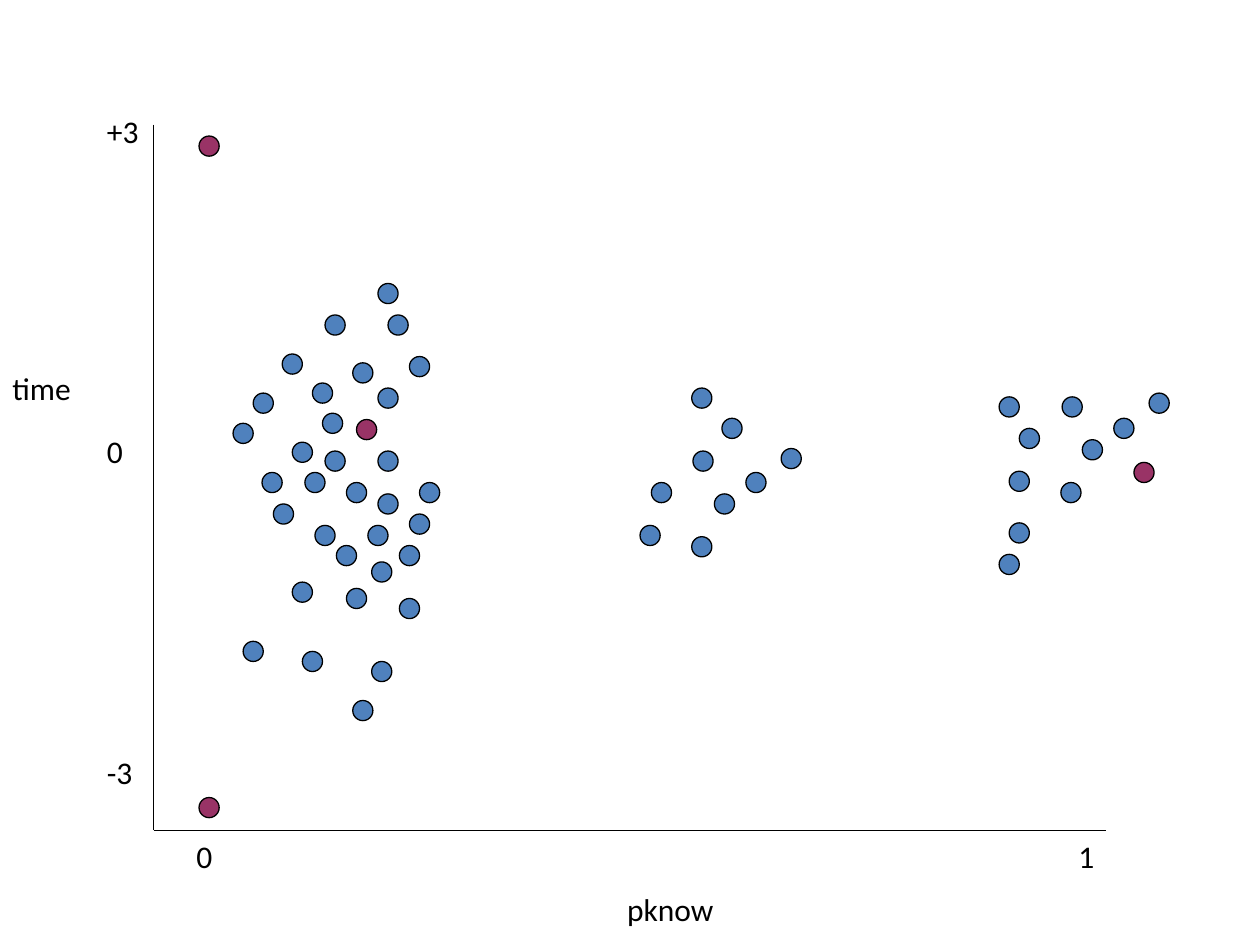
from dataclasses import dataclass

from lxml import etree
from pptx import Presentation
from pptx.dml.color import RGBColor
from pptx.enum.shapes import MSO_CONNECTOR as Connector, MSO_SHAPE as Shape
from pptx.enum.text import PP_ALIGN as Align
from pptx.oxml.ns import qn
from pptx.util import Inches, Pt


@dataclass(frozen=True)
class Theme:
    ink = RGBColor(0x00, 0x00, 0x00)
    blue = RGBColor(0x4F, 0x81, 0xBD)
    plum = RGBColor(0x99, 0x33, 0x66)
    font = "Calibri"
    text_size = Pt(18)
    line_width = Pt(0.75)


theme = Theme()
DOT_SIZE = 0.16

presentation = Presentation()
presentation.slide_width, presentation.slide_height = Inches(10), Inches(7.5)
slide = presentation.slides.add_slide(presentation.slide_layouts[6])


def add_label(box, lines, **paragraph_format):
    """Add a text box; the format values apply to each line after the first."""
    frame = slide.shapes.add_textbox(*map(Inches, box)).text_frame
    frame.word_wrap = True
    for index, line in enumerate(lines):
        paragraph = frame.paragraphs[0] if index == 0 else frame.add_paragraph()
        run = paragraph.add_run()
        run.text = line
        run.font.color.rgb = theme.ink
        for name, value in {"name": theme.font, "size": theme.text_size}.items():
            setattr(run.font, name, value)
        if index > 0:
            for name, value in paragraph_format.items():
                setattr(paragraph, name, value)
    return frame


# Axis labels
x_labels = add_label((1.46, 6.59, 7.72, 0.85), ["0\t1", "pknow"],
                     space_before=Pt(9), alignment=Align.CENTER)
tab_list = etree.SubElement(x_labels.paragraphs[0]._p.get_or_add_pPr(), qn("a:tabLst"))
etree.SubElement(tab_list, qn("a:tab"), pos=str(Inches(7)), algn="l")
add_label((0, 2.88, 0.83, 0.4), ["time"])
add_label((0.75, 0.84, 0.63, 5.82), ["+3", "0", "-3"], space_before=Pt(161.5))

# Axes
origin = (1.22, 6.59)
for start, end in [((1.22, 0.99), origin), (origin, (8.78, 6.59))]:
    axis = slide.shapes.add_connector(Connector.STRAIGHT, *map(Inches, start + end))
    axis.line.color.rgb = theme.ink
    axis.line.width = theme.line_width
    etree.SubElement(axis._element.spPr, qn("a:effectLst"))

# Left and top of each dot, by cluster
low_pknow = [
    (3.17, 4.33), (2.67, 4.33), (2.75, 4.67), (3.25, 4.08), (3.17, 4.75), (2.92, 4.17),
    (2.17, 4.00), (2.42, 3.75), (2.08, 3.75), (3.08, 2.50), (2.58, 2.50), (3.25, 2.83),
    (2.75, 3.83), (3.00, 2.25), (3.00, 3.58), (3.33, 3.83), (2.58, 3.58), (2.80, 5.56),
    (2.95, 5.25), (1.93, 5.09), (2.32, 4.62), (2.95, 4.46), (2.40, 5.17), (2.48, 3.04),
    (2.24, 2.81), (1.85, 3.36), (2.01, 3.12), (2.32, 3.51), (2.80, 2.88), (3.00, 3.92),
    (2.56, 3.28), (3.00, 3.08), (2.50, 4.17),
]
middle_pknow = [
    (5.17, 3.83), (5.08, 4.17), (5.67, 3.92), (5.92, 3.75), (5.50, 3.58), (5.49, 4.26),
    (6.20, 3.56), (5.49, 3.08), (5.73, 3.32),
]
high_pknow = [
    (7.93, 4.40), (7.93, 3.15), (8.09, 3.40), (8.01, 3.74), (8.59, 3.49), (8.01, 4.15),
    (8.84, 3.32), (8.43, 3.15), (8.42, 3.83), (9.12, 3.12),
]
highlighted = [(1.58, 1.08), (1.58, 6.33), (9.00, 3.67), (2.83, 3.33)]

for color, positions in [(theme.blue, low_pknow + middle_pknow + high_pknow),
                         (theme.plum, highlighted)]:
    for left, top in positions:
        dot = slide.shapes.add_shape(
            Shape.OVAL, *map(Inches, (left, top, DOT_SIZE, DOT_SIZE)))
        dot.shadow.inherit = False
        dot.fill.solid()
        dot.fill.fore_color.rgb = color
        dot.line.color.rgb = theme.ink
        dot.line.width = theme.line_width

presentation.save("out.pptx")
